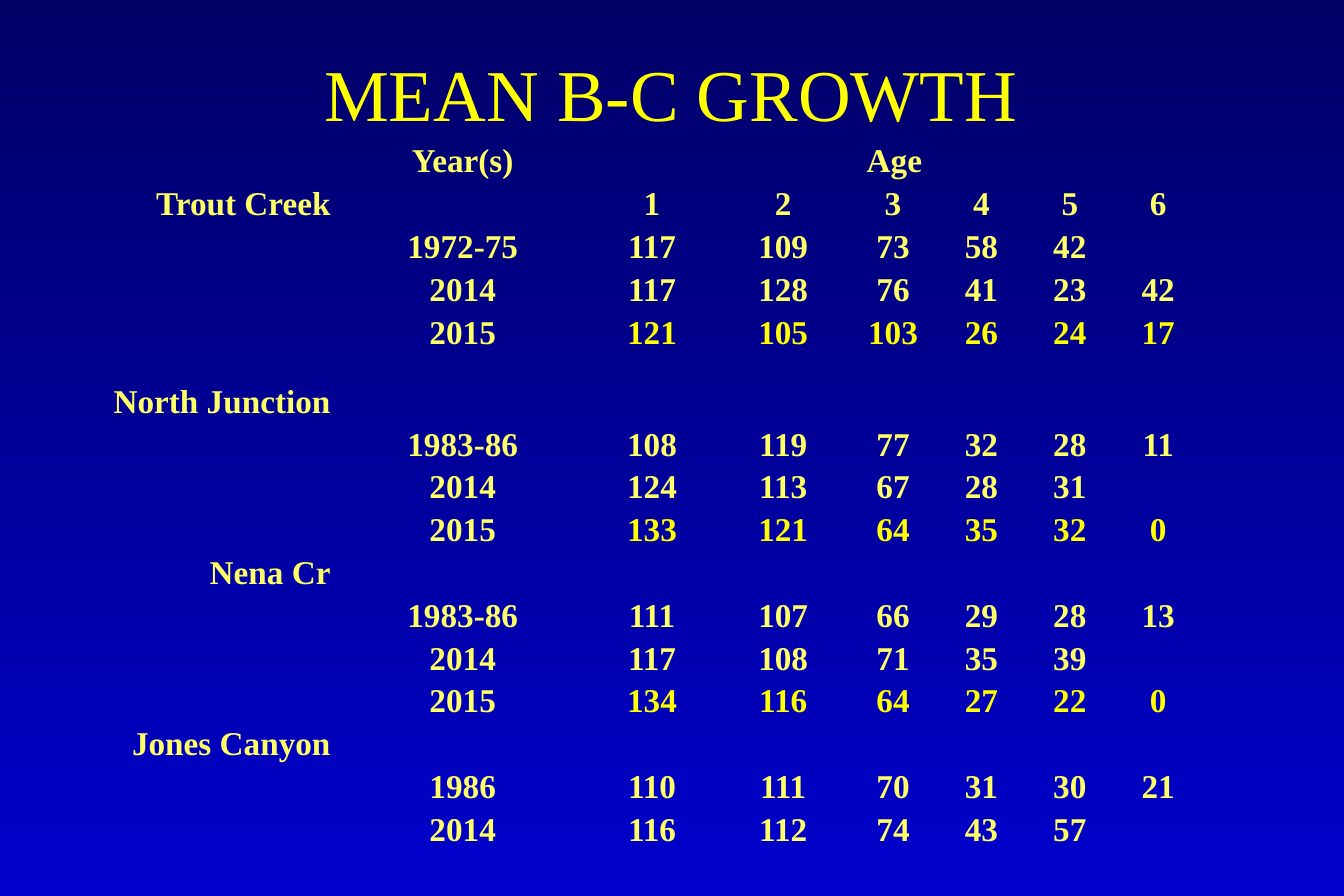
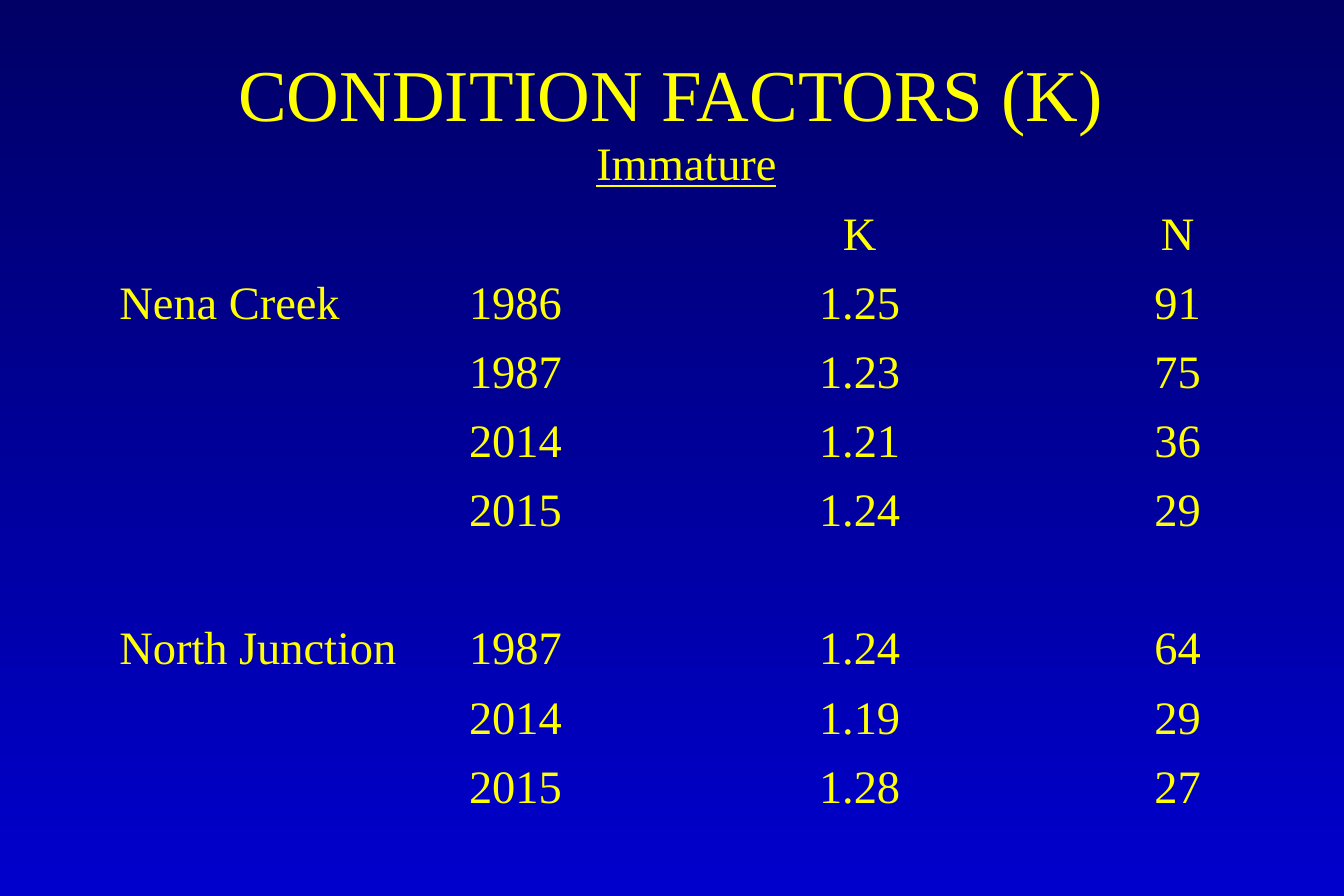
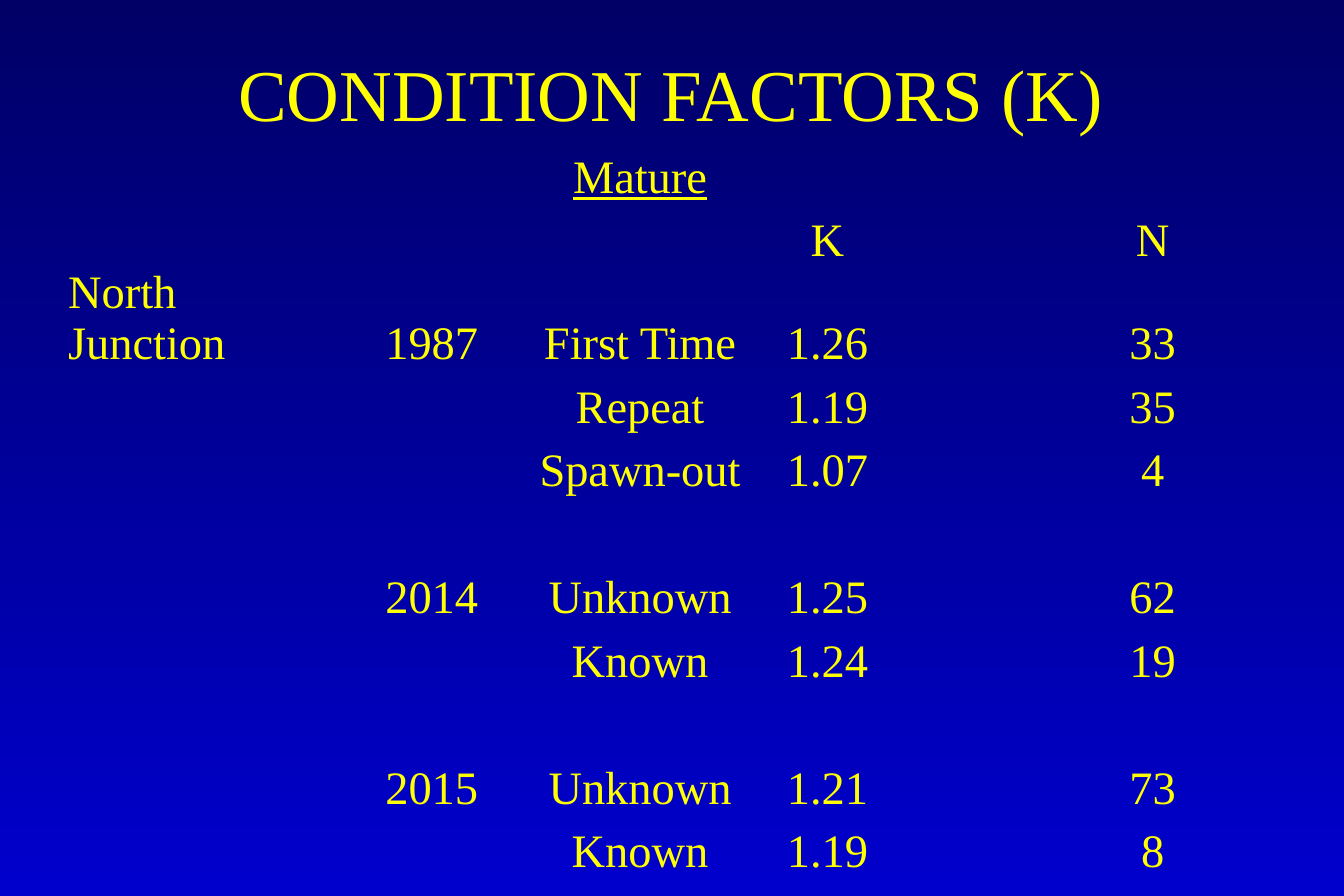
from pptx import Presentation
from pptx.dml.color import RGBColor
from pptx.enum.text import MSO_ANCHOR, MSO_AUTO_SIZE, PP_ALIGN
from pptx.util import Cm, Pt

NAVY = RGBColor(0x00, 0x00, 0x66)
BLUE = RGBColor(0x00, 0x00, 0xCC)
YELLOW = RGBColor(0xFF, 0xFF, 0x00)
PALE_YELLOW = RGBColor(0xFF, 0xFF, 0x66)
FONT = "Times New Roman"
NO_GRID_STYLE = "{2D5ABB26-0587-4C30-8999-92F81FD0307C}"

prs = Presentation()
prs.slide_width, prs.slide_height = Cm(28.58), Cm(19.05)
title_only = prs.slide_layouts[5]

backdrop = prs.slide_master.background.fill
backdrop.gradient()
backdrop.gradient_angle = 270
for stop, color, position in zip(backdrop.gradient_stops, (NAVY, BLUE), (0, 1)):
    stop.color.rgb = color
    stop.position = position


def style_text(paragraph, size, color, align, bold=False):
    paragraph.alignment = align
    for run in paragraph.runs:
        run.font.name = FONT
        run.font.size = Pt(size)
        run.font.bold = bold
        run.font.color.rgb = color


def add_table_slide(heading, left, top, widths, heights, rows, merges, margin):
    slide = prs.slides.add_slide(title_only)
    title = slide.shapes.title
    title.left, title.top, title.width, title.height = Cm(1.42), Cm(0.76), Cm(25.7), Cm(3.18)
    frame = title.text_frame
    frame.text = heading
    frame.auto_size = MSO_AUTO_SIZE.NONE
    frame.vertical_anchor = MSO_ANCHOR.TOP
    frame.margin_top = Cm(0.28)
    style_text(frame.paragraphs[0], 44, YELLOW, PP_ALIGN.CENTER)

    table = slide.shapes.add_table(
        len(rows), len(widths), Cm(left), Cm(top), Cm(sum(widths)), Cm(sum(heights))
    ).table
    table.first_row = table.horz_banding = False
    table._tbl.tblPr[0].text = NO_GRID_STYLE
    for column, width in zip(table.columns, widths):
        column.width = Cm(width)
    for row, height in zip(table.rows, heights):
        row.height = Cm(height)
    for r, first, last in merges:
        table.cell(r, first).merge(table.cell(r, last))
    for r, values in enumerate(rows):
        for c in range(len(widths)):
            cell = table.cell(r, c)
            cell.fill.background()
            cell.vertical_anchor = MSO_ANCHOR.BOTTOM
            cell.margin_left = cell.margin_right = Cm(margin)
            cell.margin_top = cell.margin_bottom = 0
            if c < len(values) and values[c]:
                cell.text_frame.text = values[c]
    return table


growth_rows = [
    ["", "Year(s)", "Age"],
    ["Trout Creek", "", "1", "2", "3", "4", "5", "6"],
    ["", "1972-75", "117", "109", "73", "58", "42"],
    ["", "2014", "117", "128", "76", "41", "23", "42"],
    ["", "2015", "121", "105", "103", "26", "24", "17"],
    ["North Junction"],
    ["", "1983-86", "108", "119", "77", "32", "28", "11"],
    ["", "2014", "124", "113", "67", "28", "31"],
    ["", "2015", "133", "121", "64", "35", "32", "0"],
    ["Nena Cr"],
    ["", "1983-86", "111", "107", "66", "29", "28", "13"],
    ["", "2014", "117", "108", "71", "35", "39"],
    ["", "2015", "134", "116", "64", "27", "22", "0"],
    ["Jones Canyon"],
    ["", "1986", "110", "111", "70", "31", "30", "21"],
    ["", "2014", "116", "112", "74", "43", "57"],
    [],
]
growth_widths = [5.79, 5.26] + [2.79] * 2 + [1.88] * 4
growth_heights = [0.91] * 5 + [1.47] + [0.91] * 11
growth = add_table_slide(
    "MEAN B-C GROWTH", 1.42, 2.92, growth_widths, growth_heights, growth_rows,
    [(0, 2, 7), (16, 3, 5)], 0.18,
)
for r, values in enumerate(growth_rows):
    for c in range(len(values)):
        cell = growth.cell(r, c)
        paragraph = cell.text_frame.paragraphs[0]
        latest = values[1:2] == ["2015"] and c > 1
        align = PP_ALIGN.RIGHT if c == 0 else PP_ALIGN.CENTER
        style_text(paragraph, 20, YELLOW if latest else PALE_YELLOW, align, bold=True)
        if latest:
            cell.margin_left = cell.margin_right = 0
        else:
            paragraph.line_spacing = 1.15

immature_rows = [
    ["", "", "", "Immature"],
    ["", "", "", "", "K", "", "N"],
    ["Nena Creek", "", "1986", "", "1.25", "", "91"],
    ["", "", "1987", "", "1.23", "", "75"],
    ["", "", "2014", "", "1.21", "", "36"],
    ["", "", "2015", "", "1.24", "", "29"],
    [],
    ["North Junction", "", "1987", "", "1.24", "", "64"],
    ["", "", "2014", "", "1.19", "", "29"],
    ["", "", "2015", "", "1.28", "", "27"],
]
mature_rows = [
    ["", "", "", "Mature"],
    ["", "", "", "", "K", "", "N"],
    ["North Junction", "", "1987", "First Time", "1.26", "", "33"],
    ["", "", "", "Repeat", "1.19", "", "35"],
    ["", "", "", "Spawn-out", "1.07", "", "4"],
    [],
    ["", "", "2014", "Unknown", "1.25", "", "62"],
    ["", "", "", "Known", "1.24", "", "19"],
    [],
    ["", "", "2015", "Unknown", "1.21", "", "73"],
    ["", "", "", "Known", "1.19", "", "8"],
]
immature_widths = [3.38] * 3 + [3.94] + [3.38] * 3
mature_widths = [3.68, 2.24, 3.68, 5.18, 2.79, 3.68, 3.68]
mature_heights = [1.35] * 2 + [2.11] + [1.35] * 8

condition_slides = [
    (2.51, 2.59, immature_widths, [1.47] * 10, immature_rows, [(2, 0, 1), (7, 0, 1)], PP_ALIGN.LEFT),
    (1.42, 2.97, mature_widths, mature_heights, mature_rows, [(2, 0, 1)], PP_ALIGN.CENTER),
]
for left, top, widths, heights, rows, merges, stage_align in condition_slides:
    condition = add_table_slide(
        "CONDITION FACTORS (K)", left, top, widths, heights, rows, merges, 0.03
    )
    for r, values in enumerate(rows):
        for c in range(len(values)):
            align = PP_ALIGN.LEFT if c == 0 else PP_ALIGN.CENTER
            style_text(condition.cell(r, c).text_frame.paragraphs[0], 28, YELLOW, align)
    stage = condition.cell(0, 3).text_frame.paragraphs[0]
    stage.alignment = stage_align
    stage.runs[0].font.underline = True

prs.save("out.pptx")
